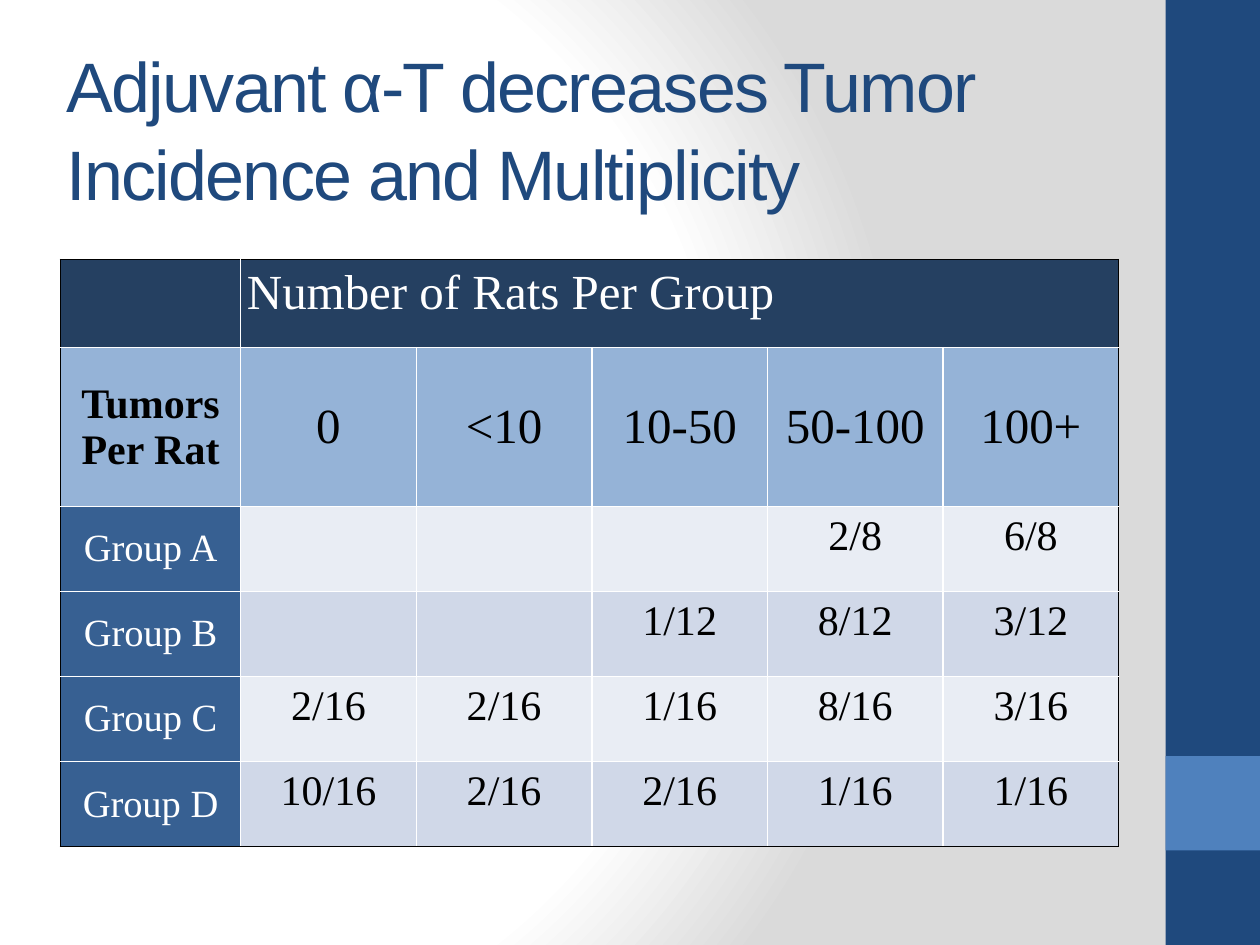
from pptx import Presentation, util as u
from pptx.dml.color import RGBColor
from pptx.enum import shapes, text
from pptx.oxml import parse_xml
from pptx.oxml.ns import nsdecls

NAVY = RGBColor(0x1F, 0x49, 0x7D)
BLUE = RGBColor(0x4F, 0x81, 0xBD)
HEADER = RGBColor(0x25, 0x40, 0x61)
RANGE = RGBColor(0x95, 0xB3, 0xD7)
GROUP = RGBColor(0x37, 0x60, 0x92)
BANDS = [RGBColor(0xE9, 0xED, 0xF4), RGBColor(0xD0, 0xD8, 0xE8)]
WHITE = RGBColor(0xFF, 0xFF, 0xFF)
BLACK = RGBColor(0, 0, 0)
GREY = RGBColor(0xDA, 0xDA, 0xDA)

ROWS = [
    ["", "Number of Rats Per Group", "", "", "", ""],
    ["Tumors Per Rat", "0", "<10", "10-50", "50-100", "100+"],
    ["Group A", "", "", "", "2/8", "6/8"],
    ["Group B", "", "", "1/12", "8/12", "3/12"],
    ["Group C", "2/16", "2/16", "1/16", "8/16", "3/16"],
    ["Group D", "10/16", "2/16", "2/16", "1/16", "1/16"],
]


def paint_background(slide):
    stops = "".join(
        f'<a:gs pos="{pos * 1000}"><a:srgbClr val="{color}"/></a:gs>'
        for pos, color in [(0, WHITE), (75, WHITE), (100, GREY)])
    slide.element.cSld.insert(0, parse_xml(
        f'<p:bg {nsdecls("p", "a")}><p:bgPr><a:gradFill rotWithShape="1">'
        f'<a:gsLst>{stops}</a:gsLst><a:path path="circle">'
        '<a:fillToRect l="20000" t="50000" r="100000" b="50000"/></a:path>'
        '</a:gradFill><a:effectLst/></p:bgPr></p:bg>'))


def add_side_band(slide, left, top, width, height):
    accent_top = top + int(height * 0.8)
    for bar_top, bar_height, color in [(top, height, NAVY), (accent_top, width, BLUE)]:
        bar = slide.shapes.add_shape(
            shapes.MSO_SHAPE.RECTANGLE, left, bar_top, width, bar_height)
        bar.shadow.inherit = False
        bar.fill.solid()
        bar.fill.fore_color.rgb = color
        bar.line.fill.background()


def set_title(slide, left, top, width, height):
    title = slide.shapes.title
    title.left, title.top, title.width, title.height = left, top, width, height
    frame = title.text_frame
    frame.text = "Adjuvant α-T decreases Tumor Incidence and Multiplicity"
    frame.word_wrap = True
    frame.auto_size = text.MSO_AUTO_SIZE.NONE
    frame.vertical_anchor = text.MSO_ANCHOR.MIDDLE
    heading = frame.paragraphs[0]
    heading.alignment = text.PP_ALIGN.LEFT
    heading.line_spacing = 1.05
    run = heading.runs[0]
    run.font.name = "Arial"
    run.font.size = u.Pt(40)
    run.font.color.rgb = NAVY
    run.font.element.set("spc", "-100") if hasattr(run.font, "element") else \
        run._r.get_or_add_rPr().set("spc", "-100")


def cell_style(row, col):
    if row == 0:
        return HEADER, WHITE, 28
    if row == 1:
        return RANGE, BLACK, 28 if col else 24
    if col == 0:
        return GROUP, WHITE, 22
    return BANDS[row % 2], BLACK, 24


def set_borders(cell, left, right, top, bottom):
    properties = cell._tc.get_or_add_tcPr()
    sides = zip(("lnL", "lnR", "lnT", "lnB"), (left, right, top, bottom))
    for position, (side, color) in enumerate(sides):
        properties.insert(position, parse_xml(
            f'<a:{side} {nsdecls("a")} w="{u.Pt(1)}"><a:solidFill>'
            f'<a:srgbClr val="{color}"/></a:solidFill></a:{side}>'))


def format_cell(cell, row, col, value):
    fill, color, size = cell_style(row, col)
    cell.fill.solid()
    cell.fill.fore_color.rgb = fill
    cell.margin_left = cell.margin_right = u.Inches(0.05)
    cell.margin_top = cell.margin_bottom = u.Inches(0.05)
    centred = row == 1 or (row > 1 and col == 0)
    cell.vertical_anchor = text.MSO_ANCHOR.MIDDLE if centred else text.MSO_ANCHOR.TOP
    last_row, last_col = len(ROWS) - 1, len(ROWS[0]) - 1
    set_borders(cell,
                BLACK if col == 0 else WHITE,
                BLACK if col == last_col or cell.is_merge_origin else WHITE,
                BLACK if row == 0 else WHITE,
                BLACK if row == last_row else WHITE)
    if not value:
        return
    cell.text_frame.text = value
    paragraph = cell.text_frame.paragraphs[0]
    paragraph.alignment = text.PP_ALIGN.CENTER if row else text.PP_ALIGN.LEFT
    font = paragraph.runs[0].font
    font.name = "Times New Roman"
    font.size = u.Pt(size)
    font.bold = row == 1 and col == 0
    font.color.rgb = color


def add_tumor_table(slide, left, top, width, height):
    tumors = slide.shapes.add_table(
        len(ROWS), len(ROWS[0]), left, top, width, height).table
    label_width, heading_heights = u.Inches(1.43), [u.Inches(0.7), u.Inches(1.26)]
    group_height = (height - sum(heading_heights)) // (len(ROWS) - 2)
    for col, column in enumerate(tumors.columns):
        column.width = (width - label_width) // 5 if col else label_width
    for row, line in enumerate(tumors.rows):
        line.height = heading_heights[row] if row < 2 else group_height
    tumors.cell(0, 1).merge(tumors.cell(0, 5))
    for row, values in enumerate(ROWS):
        for col, value in enumerate(values):
            format_cell(tumors.cell(row, col), row, col, value)


def main():
    deck = Presentation()
    deck.slide_width, deck.slide_height = u.Inches(10), u.Inches(7.5)
    slide = deck.slides.add_slide(deck.slide_layouts[5])
    paint_background(slide)
    add_side_band(slide, u.Inches(9.25), 0, u.Inches(0.75), deck.slide_height)
    set_title(slide, u.Inches(0.43), u.Inches(0.27), u.Inches(8.68), u.Inches(1.47))
    add_tumor_table(slide, u.Inches(0.48), u.Inches(2.06), u.Inches(8.4), u.Inches(4.66))
    deck.save("out.pptx")


if __name__ == "__main__":
    main()
